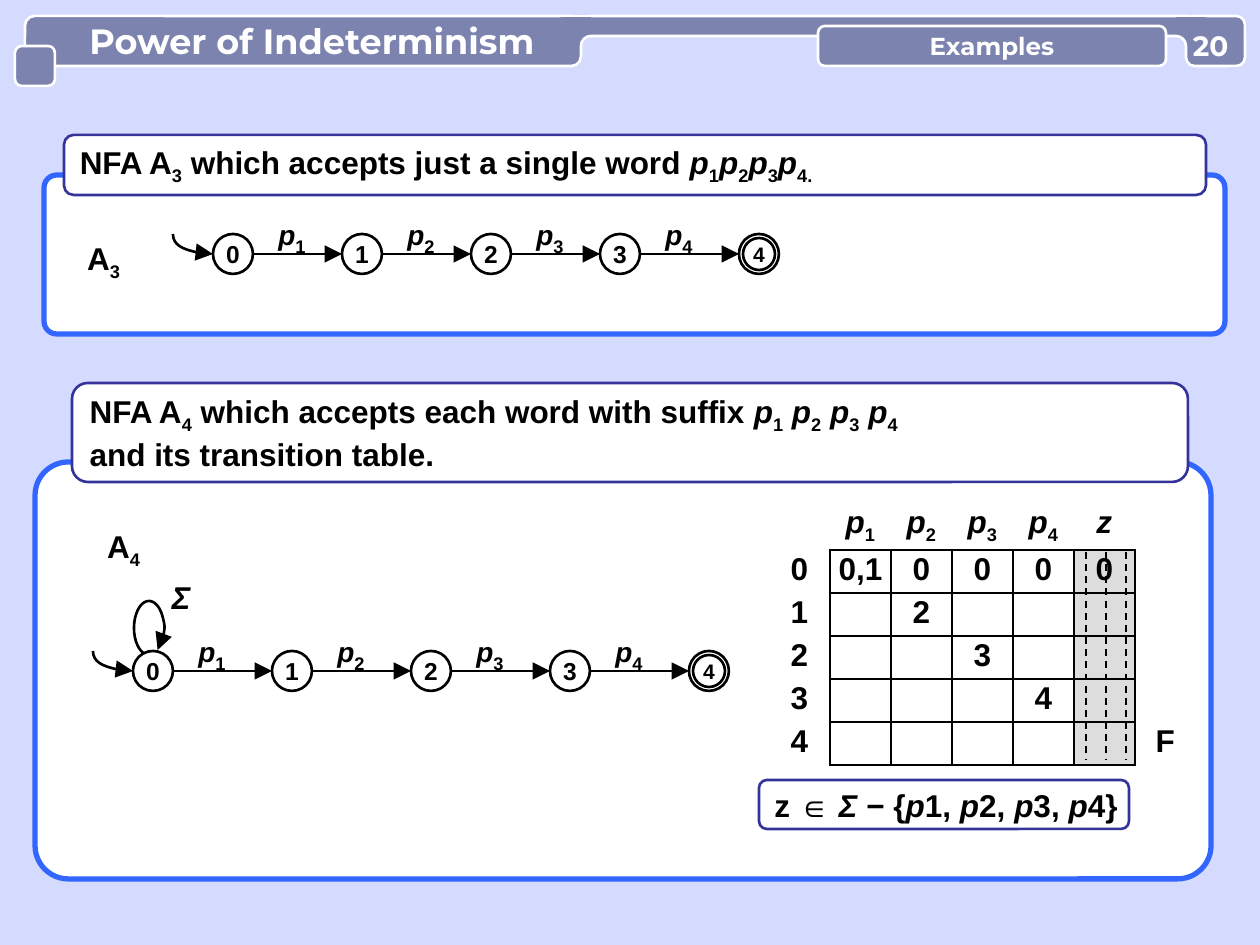
from copy import deepcopy
from math import ceil, cos, radians, sin, tan

from lxml.etree import SubElement
from pptx import Presentation
from pptx.dml.color import RGBColor
from pptx.enum.dml import MSO_LINE
from pptx.enum.shapes import MSO_CONNECTOR, MSO_SHAPE
from pptx.enum.text import MSO_ANCHOR, PP_ALIGN
from pptx.oxml.ns import qn
from pptx.util import Pt

SCALE = 914400 / 126
HUES = {"back": "D5DAFF", "bar": "7D83AF", "white": "FFFFFF", "black": "000000",
        "blue": "3366FF", "navy": "333399", "gray": "DDDDDD"}
STATE = 40
INSET = (13, 6, 13, 6)


def px(n):
    return round(n * SCALE)


def hue(name):
    return RGBColor.from_string(HUES[name])


def paint(item, fill, line, width=1.5):
    item.shadow.inherit = False
    if fill:
        item.fill.solid()
        item.fill.fore_color.rgb = hue(fill)
    else:
        item.fill.background()
    if line:
        item.line.color.rgb = hue(line)
        item.line.width = Pt(width)
    else:
        item.line.fill.background()


def write(frame, text, size, color="black", font="Arial", align=PP_ALIGN.CENTER):
    frame.text = ""
    for row, part in enumerate(text.split("\n")):
        para = frame.add_paragraph() if row else frame.paragraphs[0]
        para.alignment = align
        for piece in part.split("|"):
            run = para.add_run()
            run.text = piece.lstrip("/_")
            run.font.name, run.font.size = font, Pt(size)
            run.font.bold, run.font.italic = True, piece.startswith("/")
            run.font.color.rgb = hue(color)
            if piece.startswith("_"):
                run.font._element.set("baseline", "-25000")


def place(item, text, size, anchor=MSO_ANCHOR.MIDDLE, inset=INSET, **look):
    frame = item.text_frame
    frame.word_wrap = False
    frame.vertical_anchor = anchor
    (frame.margin_left, frame.margin_top,
     frame.margin_right, frame.margin_bottom) = map(px, inset)
    write(frame, text, size, **look)


def block(slide, box, fill, line=None, width=1.5, kind=MSO_SHAPE.RECTANGLE, curve=None):
    item = slide.shapes.add_shape(kind, *map(px, box))
    paint(item, fill, line, width)
    if curve is not None:
        item.adjustments[0] = curve
    return item


def round_box(slide, box, fill, line, curve, width=1.5):
    return block(slide, box, fill, line, width, MSO_SHAPE.ROUNDED_RECTANGLE, curve)


def label(slide, box, text, size, **look):
    item = slide.shapes.add_textbox(*map(px, box))
    place(item, text, size, **look)


def point(item):
    SubElement(item.element.spPr.find(qn("a:ln")), qn("a:tailEnd"),
               type="triangle", w="lg", len="lg")


def link(slide, start, end, color="black", width=1.5, arrow=False, dash=False):
    item = slide.shapes.add_connector(MSO_CONNECTOR.STRAIGHT, *map(px, start + end))
    item.line.color.rgb = hue(color)
    item.line.width = Pt(width)
    if dash:
        item.line.dash_style = MSO_LINE.DASH
    if arrow:
        point(item)
    SubElement(item.element.spPr, qn("a:effectLst"))


def bend(outline):
    lines = outline.findall(qn("a:lnTo"))
    for n in range(0, len(lines) - 1, 3):
        cubic = SubElement(outline, qn("a:cubicBezTo"))
        for line in lines[n:n + 3]:
            cubic.append(line[0])
            outline.remove(line)
    outline.append(lines[-1])
    wedge = deepcopy(outline)
    outline.remove(lines[-1])
    outline.set("fill", "none")
    wedge.set("stroke", "0")
    SubElement(wedge, qn("a:close"))
    outline.addnext(wedge)


def arc(slide, mid, radii, start, end, fill=None, line="black", arrow=False):
    def spot(turn, pull=0):
        x, y = cos(turn) - pull * sin(turn), sin(turn) + pull * cos(turn)
        return px(mid[0] + radii[0] * x), px(mid[1] + radii[1] * y)
    count = ceil(abs(end - start) / 90)
    step = radians(end - start) / count
    pull = 4 / 3 * tan(step / 4)
    first = radians(start)
    dots = []
    for n in range(count):
        turn = first + step * n
        dots += [spot(turn, pull), spot(turn + step, -pull), spot(turn + step)]
    form = slide.shapes.build_freeform(*spot(first))
    form.add_line_segments(dots + [tuple(map(px, mid))], close=False)
    item = form.convert_to_shape()
    paint(item, fill, line)
    bend(item.element.spPr.find(".//" + qn("a:path")))
    if arrow:
        point(item)


def state(slide, x, y, text, final):
    def ring(gap):
        side = STATE - 2 * gap
        return block(slide, (x + gap, y + gap, side, side), "white", "black",
                     kind=MSO_SHAPE.OVAL)
    item = ring(0)
    if final:
        item = ring(4)
    place(item, text, 12 if final else 14)


def chain(slide, x, y, step):
    spots = [x + step * n for n in range(4)]
    spots.append(spots[-1] + 139)
    mid = y + STATE // 2
    arc(slide, (x, y), (40, 20), 180, 90, arrow=True)
    for n, left in enumerate(spots):
        state(slide, left, y, str(n), n == 4)
        if n < 4:
            tag = block(slide, (left + 59, y - 20, 40, 40), "white")
            place(tag, f"/p|_{n + 1}", 16, MSO_ANCHOR.TOP, (0, 0, 0, 0))
            para = tag.text_frame.paragraphs[0]
            para.space_before = Pt(3)
            para.runs[1].font.size = Pt(18)
            link(slide, (left + STATE, mid), (spots[n + 1], mid), arrow=True)


def panel(slide, box, head, text):
    round_box(slide, box, "white", "blue", 0.08, 3)
    item = round_box(slide, head, "white", "navy", 0.16)
    place(item, text, 18, align=PP_ALIGN.LEFT)


def edge(cell, widths):
    props = cell._tc.get_or_add_tcPr()
    for n, (side, width) in enumerate(zip("LRTB", widths)):
        line = SubElement(props, qn(f"a:ln{side}"), w=str(Pt(width)))
        if width:
            fill = SubElement(line, qn("a:solidFill"))
            SubElement(fill, qn("a:srgbClr"), val=HUES["black"])
        else:
            SubElement(line, qn("a:noFill"))
        props.insert(n, line)


def border(a, b, last):
    if not (0 <= a <= last and 0 <= b <= last + 1):
        return 0
    return 1.5 if b in (0, last + 1) else 1


def grid(slide, x, y, wide, high):
    marks = {(0, 5): "/z", (1, 1): "0,1", (5, 6): "F"}
    marks.update({(0, n): f"/p|_{n}" for n in range(1, 5)})
    marks.update({(n + 1, 0): str(n) for n in range(5)})
    marks.update({(1, n): "0" for n in range(2, 6)})
    marks.update({(n, n): str(n) for n in range(2, 5)})
    table = slide.shapes.add_table(6, 7, px(x), px(y), px(7 * wide), px(6 * high)).table
    table.first_row = table.horz_banding = False
    for col in table.columns:
        col.width = px(wide)
    for row in table.rows:
        row.height = px(high)
    for r in range(6):
        for c in range(7):
            cell = table.cell(r, c)
            cell.margin_left = cell.margin_right = px(2)
            cell.margin_top = cell.margin_bottom = px(2)
            if c == 5 and r:
                cell.fill.solid()
                cell.fill.fore_color.rgb = hue("gray")
            else:
                cell.fill.background()
            i, j = r - 1, c - 1
            edge(cell, (border(i, j, 4), border(i, j + 1, 4),
                        border(j, i, 4), border(j, i + 1, 4)))
            if (r, c) in marks:
                write(cell.text_frame, marks[r, c], 18)
    for n in range(3):
        left = x + 317 + 20 * n
        link(slide, (left, y + 49), (left, y + 257), width=1, dash=True)


def joint(slide, x, y, right):
    block(slide, (x, y, 30, 30), "bar")
    link(slide, (x, y), (x + 30, y), "white")
    mid, end = ((x, y + 30), 360) if right else ((x + 30, y + 30), 180)
    arc(slide, mid, (10, 10), 270, end, "back", "white")


def banner(slide, x, y):
    look = {"color": "white", "font": "Montserrat"}
    title = round_box(slide, (x, y, 556, 50), "bar", "white", 0.19)
    place(title, "Power of Indeterminism", 20, inset=(31, 6, 13, 6), **look)
    round_box(slide, (x + 556, y, 615, 20), "bar", "white", 0.5)
    joint(slide, x + 536, y, False)
    round_box(slide, (x - 10, y + 30, 40, 40), "bar", "white", 0.17)
    round_box(slide, (x + 1161, y, 59, 50), "bar", "white", 0.17)
    joint(slide, x + 1151, y, True)
    topic = round_box(slide, (x + 793, y + 10, 348, 40), "bar", "white", 0.17)
    place(topic, "Examples", 14, **look)
    label(slide, (x + 1168, y + 12, 50, 34), "20", 16, inset=(0, 0, 0, 0),
          align=PP_ALIGN.LEFT, **look)


def single(slide, x, y):
    panel(slide, (x, y, 1181, 159), (x + 20, y - 40, 1142, 60),
          "NFA A|_3| which accepts just a single word |/p|_1|/p|_2|/p|_3|/p|_4.")
    chain(slide, x + 169, y + 59, 129)
    label(slide, (x + 30, y + 61, 59, 50), "A|_3", 18)


def suffix(slide, x, y):
    panel(slide, (x, y, 1176, 417), (x + 37, y - 79, 1116, 99),
          "NFA A|_4| which accepts each word with suffix |/p|_1|/ p|_2|/ p|_3|/ p|_4"
          "\nand its transition table.")
    arc(slide, (x + 114, y + 166), (15, 27), 90, 415, arrow=True)
    chain(slide, x + 98, y + 189, 139)
    label(slide, (x + 59, y + 62, 59, 50), "A|_4", 18)
    label(slide, (x + 124, y + 110, 44, 50), "/Σ", 18)
    note = round_box(slide, (x + 724, y + 318, 370, 49), "white", "navy", 0.16)
    place(note, "z ∈ |/Σ |− {|/p|1, |/p|2, |/p|3, |/p|4}", 18, align=PP_ALIGN.LEFT)
    grid(slide, x + 734, y + 41, 61, 43)


def main():
    deck = Presentation()
    deck.slide_width, deck.slide_height = px(1260), px(945)
    slide = deck.slides.add_slide(deck.slide_layouts[6])
    slide.background.fill.solid()
    slide.background.fill.fore_color.rgb = hue("back")
    single(slide, 44, 175)
    suffix(slide, 35, 462)
    banner(slide, 25, 16)
    deck.save("out.pptx")


if __name__ == "__main__":
    main()
